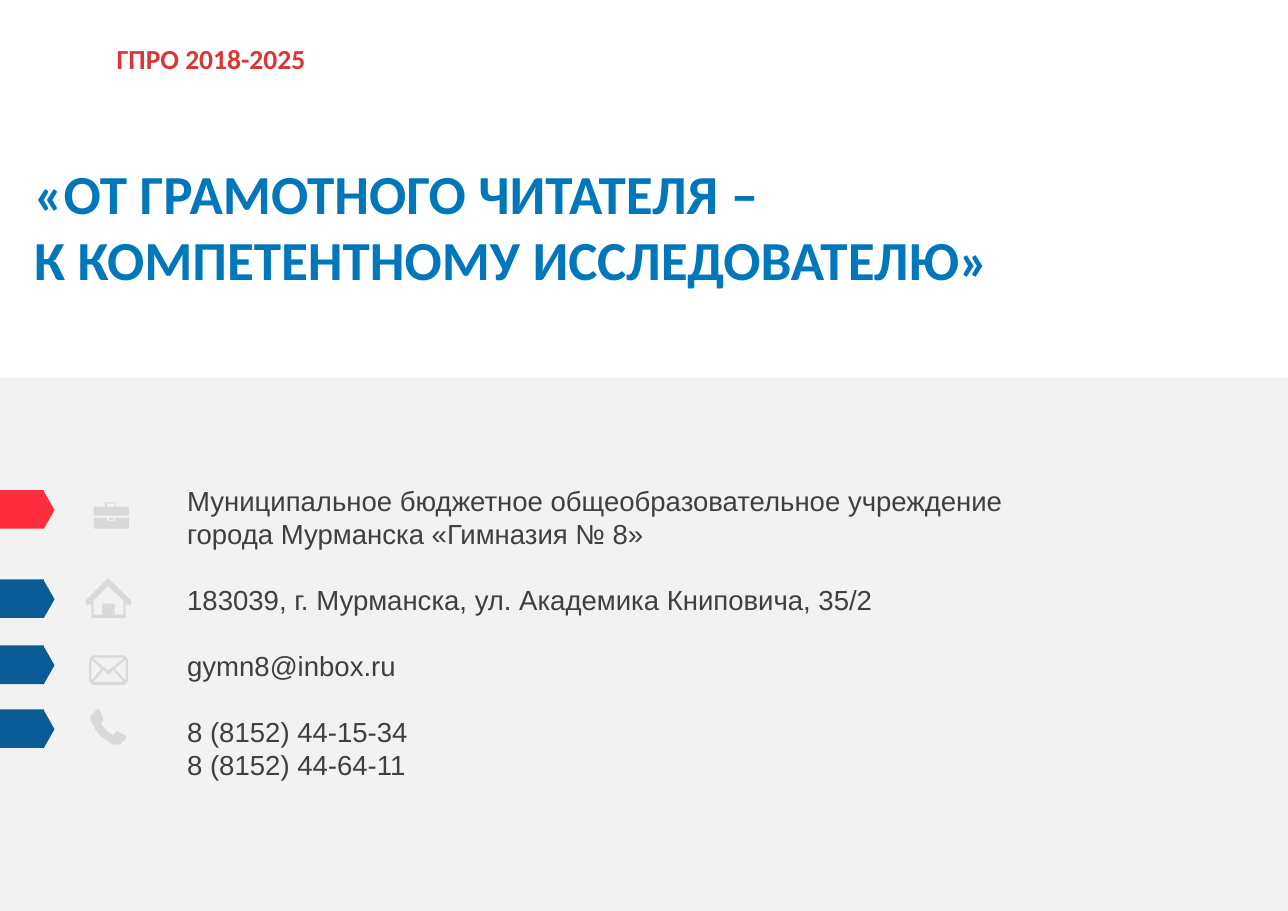
from dataclasses import dataclass

from pptx import Presentation
from pptx.dml.color import RGBColor
from pptx.enum.shapes import MSO_SHAPE
from pptx.enum.text import MSO_ANCHOR
from pptx.util import Inches, Pt


@dataclass(frozen=True)
class Theme:
    red: str = "FE2E3E"
    navy: str = "0B5B97"
    band: str = "F2F2F2"
    icon: str = "D9D9D9"
    program: tuple = ("Calibri", 18, True, "D93635")
    title: tuple = ("Calibri", 36, True, "0077BB")
    contact: tuple = ("Arial", 18, False, "3F3F3F")
    contact_line: float = 21.6


class ContactSlide:
    """Draws the parts of a contact slide in one theme."""

    def __init__(self, slide, theme):
        self.slide = slide
        self.theme = theme

    def paint(self, shape, color):
        shape.shadow.inherit = False
        shape.fill.solid()
        shape.fill.fore_color.rgb = RGBColor.from_string(color)
        shape.line.fill.background()

    def block(self, kind, box, color, rotation=0):
        block = self.slide.shapes.add_shape(kind, *map(Inches, box))
        block.rotation = rotation
        self.paint(block, color)

    def marker(self, top, color):
        self.block(MSO_SHAPE.RECTANGLE, (0, top, 0.4, 0.35), color)
        self.block(MSO_SHAPE.ISOSCELES_TRIANGLE, (0.27, top + 0.13, 0.35, 0.1), color, 90)

    def icon(self, *contours):
        outlines = [[(Inches(x), Inches(y)) for x, y in contour] for contour in contours]
        builder = self.slide.shapes.build_freeform(*outlines[0][0])
        for number, (start, *rest) in enumerate(outlines):
            if number:
                builder.move_to(*start)
            builder.add_line_segments(rest, close=True)
        self.paint(builder.convert_to_shape(), self.theme.icon)

    def text(self, box, lines, style, frame_format, spacing=None, gap_lines=()):
        frame = self.slide.shapes.add_textbox(*map(Inches, box)).text_frame
        for name, value in frame_format.items():
            setattr(frame, name, value)
        family, size, bold, color = style
        for number, line in enumerate(lines):
            paragraph = frame.add_paragraph() if number else frame.paragraphs[0]
            paragraph.text = line
            if spacing:
                paragraph.line_spacing = Pt(spacing)
            if number in gap_lines:
                paragraph.space_before = Pt(spacing)
            for name, value in {"name": family, "size": Pt(size), "bold": bold}.items():
                setattr(paragraph.font, name, value)
            paragraph.font.color.rgb = RGBColor.from_string(color)


BRIEFCASE_BASE = [(1.04, 4.73), (0.97, 4.73), (0.97, 4.7), (0.85, 4.7), (0.85, 4.79),
                  (0.86, 4.8), (1.16, 4.8), (1.17, 4.79), (1.17, 4.7), (1.04, 4.7)]
BRIEFCASE_LID = [(1.16, 4.6), (1.05, 4.6), (1.05, 4.56), (0.95, 4.56), (0.95, 4.6),
                 (0.86, 4.6), (0.85, 4.61), (0.85, 4.68), (1.17, 4.68), (1.17, 4.61)]
BRIEFCASE_HANDLE = [(0.97, 4.6), (0.97, 4.57), (1.04, 4.57), (1.04, 4.6)]

HOUSE = [(1.19, 5.45), (0.98, 5.25), (0.78, 5.45), (0.78, 5.49), (0.82, 5.49), (0.83, 5.48),
         (0.83, 5.61), (1.14, 5.61), (1.14, 5.48), (1.15, 5.49), (1.19, 5.49)]
HOUSE_INSIDE = [(1.12, 5.58), (1.04, 5.58), (1.04, 5.48), (0.93, 5.48), (0.93, 5.58),
                (0.85, 5.58), (0.85, 5.45), (0.98, 5.32), (1.12, 5.45)]

ENVELOPE = [(1.12, 5.95), (0.85, 5.95), (0.83, 5.96), (0.82, 5.97), (0.81, 6), (0.81, 6.18),
            (0.82, 6.2), (0.83, 6.21), (0.85, 6.22), (1.12, 6.22), (1.14, 6.21),
            (1.15, 6.2), (1.16, 6.18), (1.16, 6), (1.15, 5.97), (1.14, 5.96)]
ENVELOPE_RIGHT = [(1.04, 6.07), (1.14, 5.99), (1.14, 6.18)]
ENVELOPE_FLAP = [(1.12, 5.97), (1.12, 5.98), (0.98, 6.09), (0.85, 5.98), (0.85, 5.97)]
ENVELOPE_LEFT = [(0.83, 6.18), (0.83, 5.99), (0.92, 6.07)]
ENVELOPE_BOTTOM = [(0.85, 6.19), (0.94, 6.08), (0.98, 6.12), (0.99, 6.12), (1.03, 6.08),
                   (1.12, 6.19)]

HANDSET = [(1.15, 6.69), (1.14, 6.71), (1.1, 6.75), (1.08, 6.76), (1.04, 6.76), (1.01, 6.75),
           (0.97, 6.72), (0.91, 6.68), (0.87, 6.63), (0.85, 6.59), (0.83, 6.55), (0.82, 6.53),
           (0.82, 6.51), (0.83, 6.49), (0.88, 6.44), (0.9, 6.44), (0.94, 6.52), (0.94, 6.54),
           (0.92, 6.56), (0.92, 6.58), (0.94, 6.6), (0.96, 6.62), (0.99, 6.65), (1.01, 6.66),
           (1.02, 6.67), (1.03, 6.67), (1.05, 6.65), (1.06, 6.64), (1.07, 6.64), (1.14, 6.68)]


def main():
    deck = Presentation()
    deck.slide_width, deck.slide_height = Inches(11.69), Inches(8.27)
    theme = Theme()
    page = ContactSlide(deck.slides.add_slide(deck.slide_layouts[6]), theme)

    page.text((0.96, 0.33, 1.92, 0.4), ["ГПРО 2018-2025"], theme.program, {"word_wrap": False})
    page.block(MSO_SHAPE.RECTANGLE, (0, 3.43, 11.69, 4.84), theme.band)
    page.text(
        (0.2, 0.91, 9.04, 2.28),
        ["«ОТ ГРАМОТНОГО ЧИТАТЕЛЯ –", "К КОМПЕТЕНТНОМУ ИССЛЕДОВАТЕЛЮ»"],
        theme.title,
        {"word_wrap": True, "vertical_anchor": MSO_ANCHOR.MIDDLE,
         "margin_left": Inches(0.11), "margin_right": Inches(0.11)},
    )
    page.text(
        (1.6, 4.34, 7.68, 2.83),
        ["Муниципальное бюджетное общеобразовательное учреждение города Мурманска «Гимназия № 8»",
         "183039, г. Мурманска, ул. Академика Книповича, 35/2",
         "gymn8@inbox.ru",
         "8 (8152) 44-15-34",
         "8 (8152) 44-64-11"],
        theme.contact,
        {"word_wrap": True},
        spacing=theme.contact_line,
        gap_lines=(1, 2, 3),
    )

    page.marker(4.45, theme.red)
    for top in (5.26, 5.86, 6.44):
        page.marker(top, theme.navy)

    page.icon(BRIEFCASE_BASE)
    page.icon(BRIEFCASE_LID, BRIEFCASE_HANDLE)
    page.block(MSO_SHAPE.RECTANGLE, (0.99, 4.7, 0.04, 0.02), theme.icon)
    page.icon(HOUSE, HOUSE_INSIDE)
    page.icon(HANDSET)
    page.icon(ENVELOPE, ENVELOPE_RIGHT, ENVELOPE_FLAP, ENVELOPE_LEFT, ENVELOPE_BOTTOM)

    deck.save("out.pptx")


if __name__ == "__main__":
    main()
